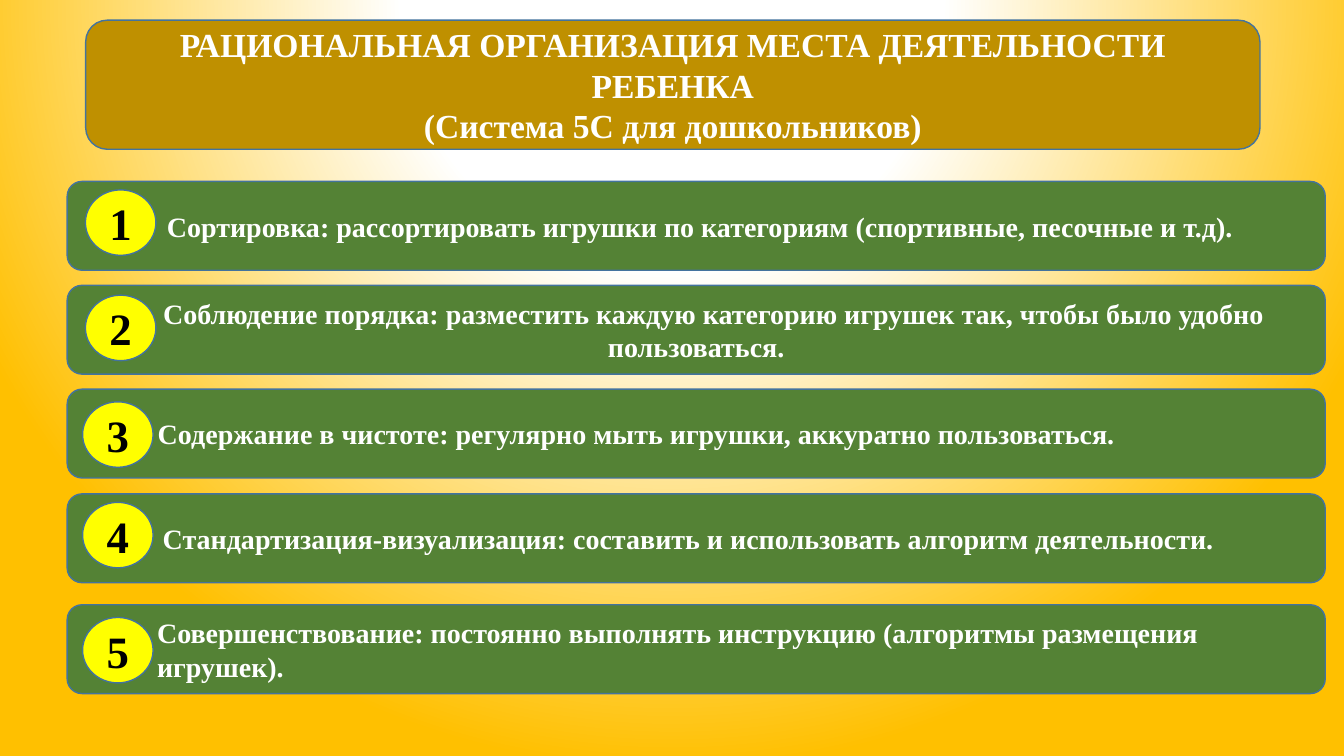
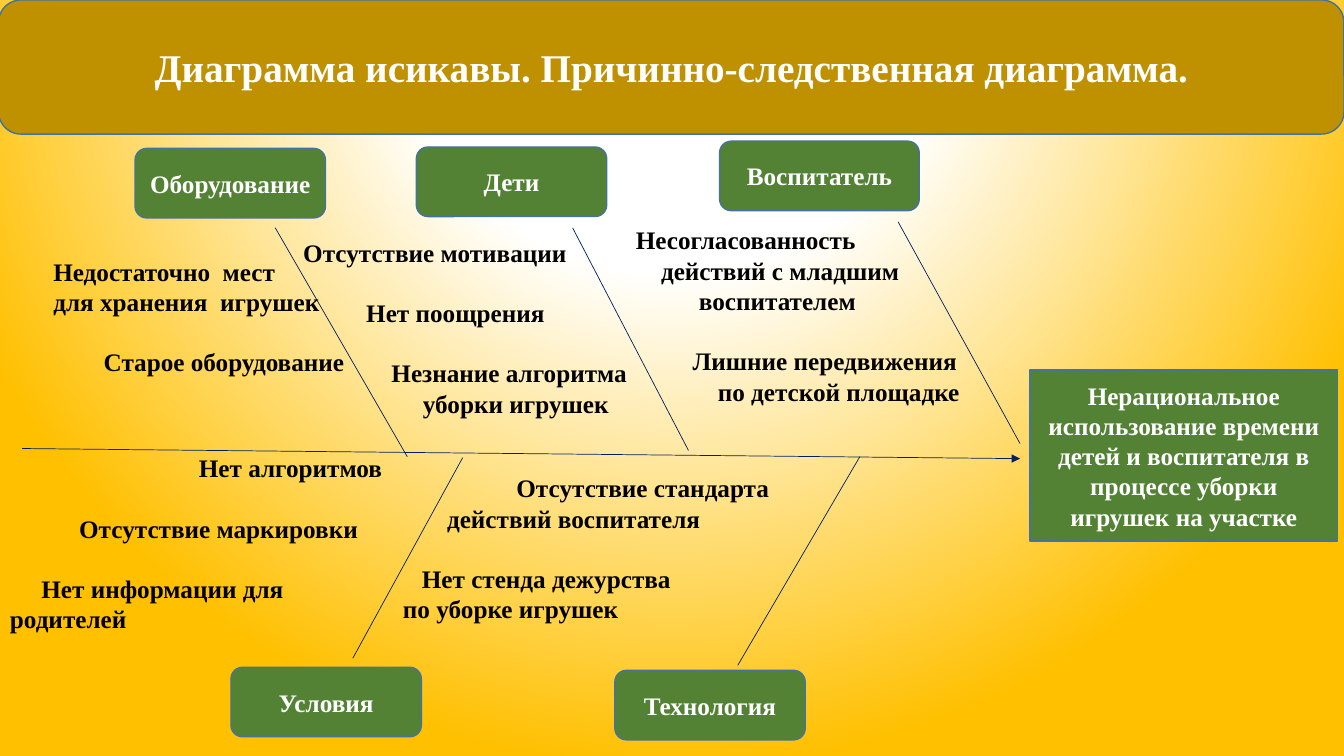
from lxml import etree
from pptx import Presentation
from pptx.dml.color import RGBColor
from pptx.enum import shapes, text
from pptx.oxml import ns, parse_xml
from pptx.util import Pt

FONT = "Times New Roman"
WHITE = RGBColor(0xFF, 0xFF, 0xFF)
BLACK = RGBColor(0, 0, 0)
GOLD = RGBColor(0xBF, 0x90, 0x00)
AMBER = RGBColor(0xFF, 0xC0, 0x00)
GREEN = RGBColor(0x54, 0x82, 0x35)
YELLOW = RGBColor(0xFF, 0xFF, 0x00)
BORDER = RGBColor(0x43, 0x73, 0x9E)
NAVY = RGBColor(0x00, 0x20, 0x60)

ROUND = shapes.MSO_SHAPE.ROUNDED_RECTANGLE
RECT = shapes.MSO_SHAPE.RECTANGLE
OVAL = shapes.MSO_SHAPE.OVAL
LEFT, CENTER = text.PP_ALIGN.LEFT, text.PP_ALIGN.CENTER
LINE_18 = 21.6   # height of one 18 pt line
SPACE_18 = 4.5   # indent step of the cause lists

# Steps: top, badge offset (x, y), first-line indent, alignment, lines
STEPS = [
    (129.6, 13, 6, 61, LEFT,
     ["Сортировка: рассортировать игрушки по категориям (спортивные, песочные и т.д)."]),
    (203.8, 13, 7, 25, CENTER,
     ["Соблюдение порядка: разместить каждую категорию игрушек так, "
      "чтобы было удобно пользоваться."]),
    (278, 11, 9, 54.5, LEFT,
     ["Содержание в чистоте: регулярно мыть игрушки, аккуратно пользоваться."]),
    (352.8, 11, 6, 58, LEFT,
     ["Стандартизация-визуализация: составить и использовать алгоритм деятельности."]),
    (432, 11, 9, 54, LEFT,
     ["Совершенствование: постоянно выполнять инструкцию (алгоритмы размещения",
      "игрушек)."]),
]

# Categories: label, box, then the bone's start and end
CATEGORIES = [
    ("Оборудование", (96.5, 106, 136, 49.7), (196.6, 162.7, 290.9, 326.2)),
    ("Дети", (297.4, 105, 136, 49.7), (409, 162.7, 491.8, 321.8)),
    ("Воспитатель", (514, 100.8, 142.6, 49.7), (641.5, 158.4, 728.6, 316.8)),
    ("Условия", (165, 476.6, 136, 49.7), (330.5, 326.9, 252, 470.2)),
    ("Технология", (439.2, 478.8, 136, 49.7), (614.2, 326.2, 527, 475.2)),
]

# Causes: box, then lines of (indent steps, blank lines before, text)
CAUSES = [
    ((31, 179.3, 235.4, 94.3), [
        (0, 0, "Недостаточно  мест"), (0, 0, "для хранения  игрушек"),
        (8, 1, "Старое оборудование")]),
    ((209.5, 165.6, 262, 138.2), [
        (0, 0, "Отсутствие мотивации"), (10, 1, "Нет поощрения"),
        (14, 1, "Незнание алгоритма"), (19, 0, "уборки игрушек")]),
    ((447.1, 157, 250.6, 138.2), [
        (0, 0, "Несогласованность"), (4, 0, "действий с младшим"),
        (10, 0, "воспитателем"), (9, 1, "Лишние передвижения"),
        (13, 0, "по детской площадке")]),
    ((0, 319.7, 280.8, 138.2), [
        (30, 0, "Нет алгоритмов"), (11, 1, "Отсутствие маркировки"),
        (5, 1, "Нет информации для родителей")]),
    ((280.8, 334, 304.6, 138.2), [
        (18, 0, "Отсутствие стандарта"), (7, 0, "действий воспитателя"),
        (3, 1, "Нет стенда дежурства"), (0, 0, "по уборке игрушек")]),
]


def add_slide(prs):
    """Blank slide with the white-to-amber radial background."""
    s = prs.slides.add_slide(prs.slide_layouts[6])
    stops = "".join(
        f'<a:gs pos="{pos}"><a:srgbClr val="{color}"/></a:gs>'
        for pos, color in ((0, WHITE), (35000, WHITE), (100000, AMBER)))
    bg = parse_xml(
        f'<p:bg {ns.nsdecls("p", "a")}><p:bgPr><a:gradFill rotWithShape="1">'
        f'<a:gsLst>{stops}</a:gsLst><a:path path="circle">'
        '<a:fillToRect l="50000" t="-80000" r="50000" b="180000"/></a:path>'
        '</a:gradFill><a:effectLst/></p:bgPr></p:bg>')
    s.element.cSld.insert(0, bg)
    return s


def add_line(tf, i, line, size, color, align, indent=0, before=0):
    p = tf.paragraphs[0] if i == 0 else tf.add_paragraph()
    p.alignment = align
    p.space_before = Pt(before)
    if indent:
        pPr = p._p.get_or_add_pPr()
        pPr.set("marL", "0")
        pPr.set("indent", str(int(Pt(indent))))
    r = p.add_run()
    r.text = line
    r.font.name, r.font.size, r.font.bold = FONT, Pt(size), True
    r.font.color.rgb = color


def add_box(s, kind, box, fill, lines, size, color=WHITE, align=CENTER, indent=0):
    sp = s.shapes.add_shape(kind, *map(Pt, box))
    sp.shadow.inherit = False
    sp.fill.solid()
    sp.fill.fore_color.rgb = fill
    sp.line.color.rgb = BORDER
    sp.line.width = Pt(1)
    tf = sp.text_frame
    tf.word_wrap = True
    tf.vertical_anchor = text.MSO_ANCHOR.MIDDLE
    for i, line in enumerate(lines):
        add_line(tf, i, line, size, color, align, indent)


def add_title(s, box, lines, size):
    add_box(s, ROUND, box, GOLD, lines, size)


def add_step(s, number, box, dx, dy, indent, align, lines):
    x, y = box[:2]
    add_box(s, ROUND, box, GREEN, lines, 20, align=align, indent=indent)
    add_box(s, OVAL, (x + dx, y + dy, 50.4, 46.8), YELLOW, [str(number)], 32, BLACK)


def add_bone(s, ends, arrow=False):
    c = s.shapes.add_connector(shapes.MSO_CONNECTOR.STRAIGHT, *map(Pt, ends))
    c.line.color.rgb = NAVY
    c.line.width = Pt(0.5)
    if arrow:
        etree.SubElement(c.line._get_or_add_ln(), ns.qn("a:tailEnd"), type="triangle")
    etree.SubElement(c._element.spPr, ns.qn("a:effectLst"))


def add_causes(s, box, lines):
    tf = s.shapes.add_textbox(*map(Pt, box)).text_frame
    tf.word_wrap = True
    for i, (steps, blanks, line) in enumerate(lines):
        add_line(tf, i, line, 18, BLACK, LEFT, steps * SPACE_18, blanks * LINE_18)


def build_steps(prs):
    s = add_slide(prs)
    add_title(s, (61.2, 14.4, 838.8, 92.2),
              ["РАЦИОНАЛЬНАЯ ОРГАНИЗАЦИЯ МЕСТА ДЕЯТЕЛЬНОСТИ РЕБЕНКА",
               "(Система 5С для дошкольников)"], 24)
    for number, (top, *step) in enumerate(STEPS, 1):
        add_step(s, number, (48, top, 898.6, 63.4), *step)


def build_fishbone(prs):
    s = add_slide(prs)
    add_title(s, (-1, 0, 961, 95.8),
              ["Диаграмма исикавы. Причинно-следственная диаграмма."], 28)
    # Spine and effect
    add_bone(s, (15.8, 320.4, 728.6, 327.6), arrow=True)
    add_box(s, RECT, (735.8, 264.2, 219.6, 122.4), GREEN,
            ["Нерациональное использование времени детей и воспитателя "
             "в процессе уборки игрушек на участке"], 18)
    # Categories with their bones
    for label, box, ends in CATEGORIES:
        add_bone(s, ends)
        add_box(s, ROUND, box, GREEN, [label], 18)
    for box, lines in CAUSES:
        add_causes(s, box, lines)


def main():
    prs = Presentation()
    prs.slide_width, prs.slide_height = Pt(960), Pt(540)
    build_steps(prs)
    build_fishbone(prs)
    prs.save("out.pptx")


if __name__ == "__main__":
    main()
